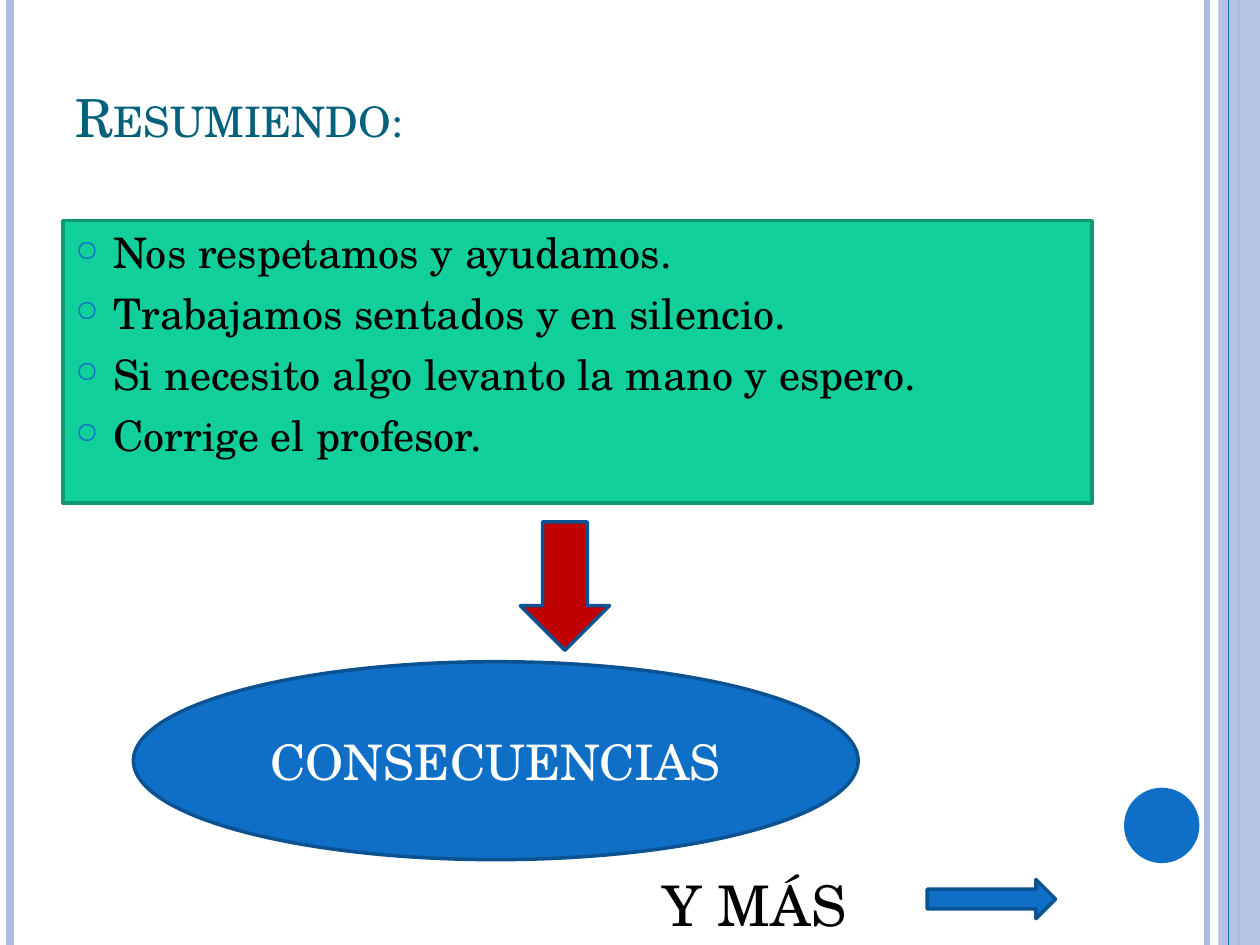
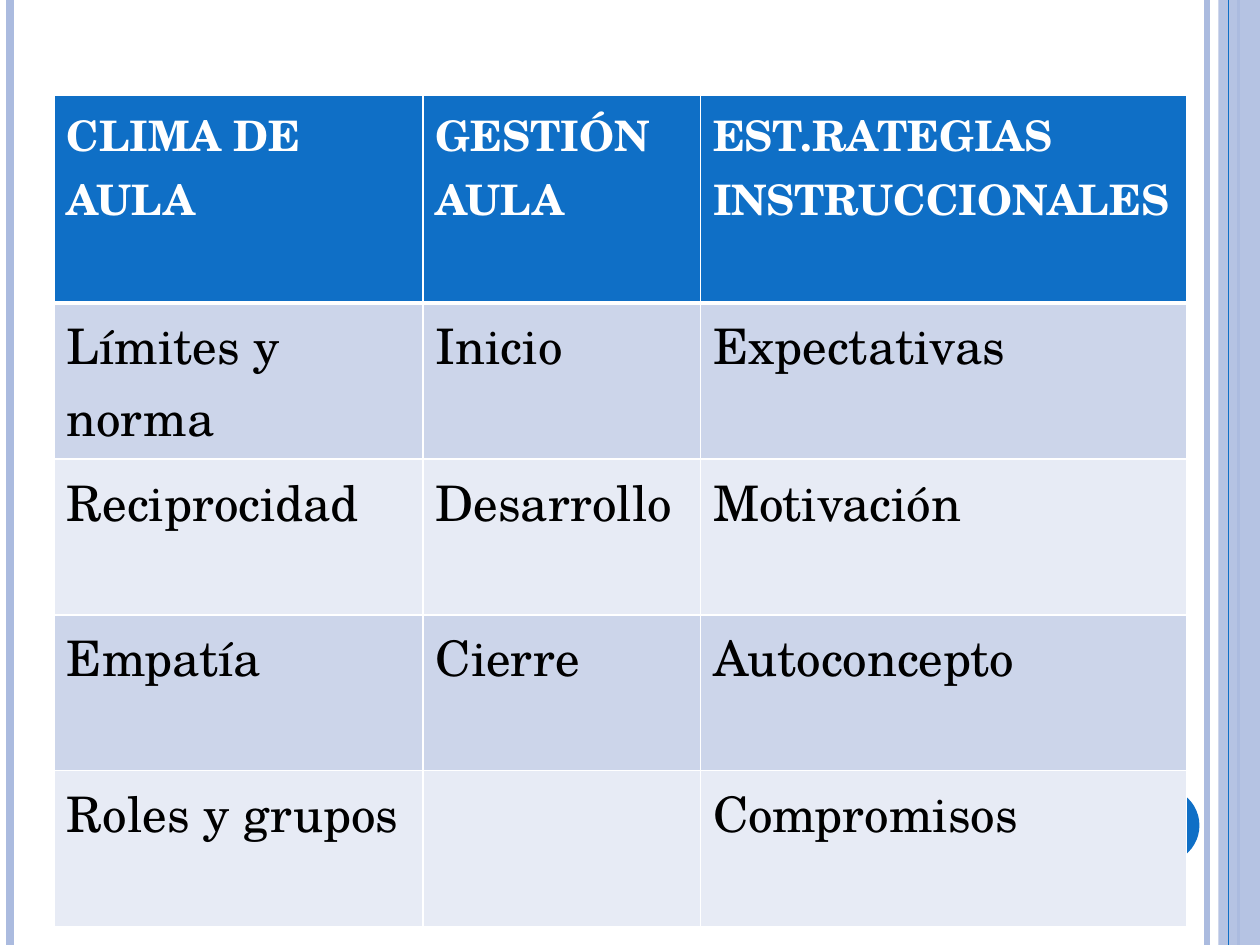
"""Builds two classroom slides: a summary of rules and a table of teaching areas."""
import pptx
import pptx.dml.color
import pptx.enum.shapes
import pptx.enum.text
import pptx.oxml
import pptx.oxml.ns
import pptx.util
from lxml import etree

Cm = pptx.util.Cm
Pt = pptx.util.Pt
RGBColor = pptx.dml.color.RGBColor
SHAPE = pptx.enum.shapes.MSO_SHAPE
ALIGN = pptx.enum.text.PP_ALIGN
ANCHOR = pptx.enum.text.MSO_ANCHOR
qn = pptx.oxml.ns.qn

FONT = "TeX Gyre Schola"
BLUE = RGBColor(0x0F, 0x6F, 0xC6)
DARK_BLUE = RGBColor(0x0B, 0x52, 0x92)
LAVENDER = RGBColor(0xAB, 0xBB, 0xDF)
TEAL = RGBColor(0x04, 0x61, 0x7B)
GREEN = RGBColor(0x10, 0xCF, 0x9B)
DARK_GREEN = RGBColor(0x0C, 0x99, 0x73)
RED = RGBColor(0xC0, 0x00, 0x00)
BLACK = RGBColor(0x00, 0x00, 0x00)
WHITE = RGBColor(0xFF, 0xFF, 0xFF)
ROW_TINTS = [RGBColor(0xCC, 0xD5, 0xEA), RGBColor(0xE7, 0xEB, 0xF5)]


def write_text(frame, text, size=24, color=BLACK, bold=False, small_caps=False,
               align=ALIGN.LEFT, anchor=ANCHOR.TOP, bullet=None, before=0, spacing=None):
    frame.word_wrap = True
    frame.vertical_anchor = anchor
    frame.text = text
    for paragraph in frame.paragraphs:
        paragraph.alignment = align
        paragraph.space_before = Pt(before)
        paragraph.line_spacing = spacing
        for run in paragraph.runs:
            run.font.name = FONT
            run.font.size = Pt(size)
            run.font.bold = bold
            run.font.color.rgb = color
            if small_caps:
                run.font._element.set("cap", "small")
        if bullet:
            properties = paragraph._p.get_or_add_pPr()
            properties.set("marL", str(Cm(0.76)))
            properties.set("indent", str(Cm(-0.76)))
            tint = etree.SubElement(properties, qn("a:buClr"))
            etree.SubElement(tint, qn("a:srgbClr"), val=str(BLUE))
            etree.SubElement(properties, qn("a:buSzPct"), val="70000")
            etree.SubElement(properties, qn("a:buChar"), char=bullet)


def add_figure(slide, kind, left, top, width, height, fill, outline=None):
    figure = slide.shapes.add_shape(kind, Cm(left), Cm(top), Cm(width), Cm(height))
    figure.shadow.inherit = False
    figure.fill.solid()
    figure.fill.fore_color.rgb = fill
    if outline is None:
        figure.line.fill.background()
    else:
        figure.line.color.rgb = outline
        figure.line.width = Pt(2)
    return figure


deck = pptx.Presentation()
deck.slide_width = Cm(25.4)
deck.slide_height = Cm(19.05)
summary = deck.slides.add_slide(deck.slide_layouts[5])
areas = deck.slides.add_slide(deck.slide_layouts[6])

for slide in (summary, areas):
    side_band = add_figure(slide, SHAPE.RECTANGLE, 24.56, 0, 0.84, 19.05, LAVENDER)
    band_color = side_band._element.spPr.find(".//" + qn("a:srgbClr"))
    etree.SubElement(band_color, qn("a:alpha"), val="87000")
    for x, color, weight in [(24.33, LAVENDER, 3), (0.21, LAVENDER, 4.5),
                             (24.97, LAVENDER, 1.5), (24.76, BLUE, 0.75)]:
        stripe = slide.shapes.add_connector(
            pptx.enum.shapes.MSO_CONNECTOR.STRAIGHT, Cm(x), 0, Cm(x), deck.slide_height)
        stripe.line.color.rgb = color
        stripe.line.width = Pt(weight)
        etree.SubElement(stripe._element.spPr, qn("a:effectLst"))
    add_figure(slide, SHAPE.OVAL, 22.66, 15.88, 1.52, 1.52, BLUE)

heading = summary.shapes.title
heading.left, heading.top, heading.width, heading.height = Cm(1.27), Cm(0.76), Cm(20.75), Cm(2.36)
write_text(heading.text_frame, "Resumiendo:", size=30, color=TEAL, small_caps=True,
           anchor=ANCHOR.BOTTOM)

rules = add_figure(summary, SHAPE.RECTANGLE, 1.27, 4.45, 20.75, 5.69, GREEN, DARK_GREEN)
write_text(rules.text_frame, "\n".join([
    "Nos respetamos y ayudamos.",
    "Trabajamos sentados y en silencio.",
    "Si necesito algo levanto la mano y espero.",
    "Corrige el profesor.",
]), bullet="○", before=6)

add_figure(summary, SHAPE.DOWN_ARROW, 10.49, 10.52, 1.8, 2.59, RED, DARK_BLUE)
consequences = add_figure(summary, SHAPE.OVAL, 2.69, 13.34, 14.61, 3.99, BLUE, DARK_BLUE)
write_text(consequences.text_frame, "CONSECUENCIAS", size=28, color=WHITE,
           align=ALIGN.CENTER, anchor=ANCHOR.MIDDLE)
more = summary.shapes.add_textbox(Cm(13.11), Cm(17.42), Cm(8), Cm(1.63))
write_text(more.text_frame, "Y MÁS", size=32)
add_figure(summary, SHAPE.RIGHT_ARROW, 18.69, 17.73, 2.59, 0.79, BLUE, DARK_BLUE)

AREA_ROWS = [
    ["CLIMA DE AULA", "GESTIÓN AULA", "EST.RATEGIAS INSTRUCCIONALES"],
    ["Límites y norma", "Inicio", "Expectativas"],
    ["Reciprocidad", "Desarrollo", "Motivación"],
    ["Empatía", "Cierre", "Autoconcepto"],
    ["Roles y grupos", "", "Compromisos"],
]
area_table = areas.shapes.add_table(5, 3, Cm(1.09), Cm(1.93), Cm(22.83), Cm(16.74)).table
for column, width in zip(area_table.columns, (7.44, 5.59, 9.8)):
    column.width = Cm(width)
for row_number, (row, labels) in enumerate(zip(area_table.rows, AREA_ROWS)):
    is_header = row_number == 0
    row.height = Cm(4.18 if is_header else 3.14)
    for cell, label in zip(row.cells, labels):
        write_text(cell.text_frame, label, size=24 if is_header else 28, bold=is_header,
                   color=WHITE if is_header else BLACK, spacing=Pt(37 if is_header else 41))
        properties = cell._tc.get_or_add_tcPr()
        for side in ("lnL", "lnR", "lnT", "lnB"):
            thick = (is_header and side == "lnB") or (row_number == 1 and side == "lnT")
            border = etree.SubElement(properties, qn("a:" + side), w=str(Pt(3 if thick else 1)))
            ink = etree.SubElement(border, qn("a:solidFill"))
            etree.SubElement(ink, qn("a:srgbClr"), val=str(WHITE))
        cell.fill.solid()
        cell.fill.fore_color.rgb = BLUE if is_header else ROW_TINTS[(row_number - 1) % 2]

deck.save("out.pptx")
